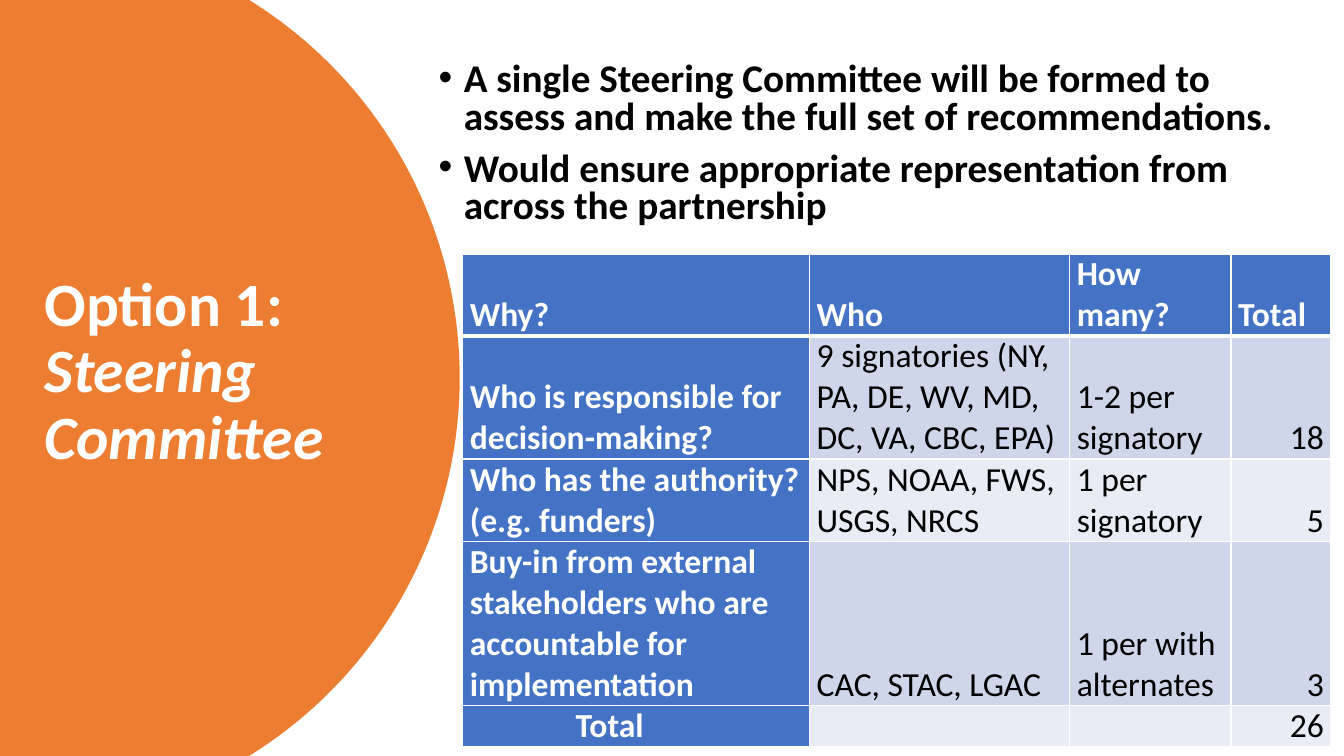
from math import asin, cos, sin

from lxml import etree
from pptx import Presentation
from pptx.dml.color import RGBColor
from pptx.enum.text import MSO_ANCHOR, MSO_AUTO_SIZE, PP_ALIGN
from pptx.oxml.ns import qn
from pptx.util import Inches, Pt

LEFT, RIGHT = PP_ALIGN.LEFT, PP_ALIGN.RIGHT
MIDDLE, BOTTOM = MSO_ANCHOR.MIDDLE, MSO_ANCHOR.BOTTOM
NO_FIT = MSO_AUTO_SIZE.NONE

FONT = "Calibri"
COLORS = {
    "orange": "ED7D31",
    "blue": "4472C4",
    "dark": "CFD5EA",
    "light": "E9EBF5",
    "white": "FFFFFF",
    "black": "000000",
}

POINTS = [
    "A single Steering Committee will be formed to assess and make "
    "the full set of recommendations.",
    "Would ensure appropriate representation from across the partnership",
]
ROWS = [
    ["Why?", "Who", "How many?", "Total"],
    ["Who is responsible for decision-making?",
     "9 signatories (NY, PA, DE, WV, MD, DC, VA, CBC, EPA)",
     "1-2 per signatory", "18"],
    ["Who has the authority? (e.g. funders)", "NPS, NOAA, FWS, USGS, NRCS",
     "1 per signatory", "5"],
    ["Buy-in from external stakeholders who are accountable for implementation",
     "CAC, STAC, LGAC", "1 per with alternates", "3"],
    ["Total", "", "", "26"],
]
WIDTHS = [3.44, 2.58, 1.6, 0.99]
HEIGHTS = [0.7, 1.15, 0.77, 0.77, 0.38]


def color(name):
    return RGBColor.from_string(COLORS[name])


def style(font, size=24, tint="black", bold=False, italic=False):
    font.name, font.size = FONT, Pt(size)
    font.bold, font.italic = bold, italic
    font.color.rgb = color(tint)


def write(para, text, align=LEFT, space=1.0, before=0, **look):
    """Add a run of text to a paragraph and format both."""
    para.alignment = align
    para.line_spacing = space
    para.space_before = Pt(before)
    run = para.add_run()
    run.text = text
    style(run.font, **look)


def place(holder, left, top, width, height):
    """Move a placeholder and return its text frame."""
    holder.left, holder.top = Inches(left), Inches(top)
    holder.width, holder.height = Inches(width), Inches(height)
    frame = holder.text_frame
    frame.word_wrap = True
    frame.auto_size = NO_FIT
    frame.vertical_anchor = MIDDLE
    return frame


def add_disc(slide, mid=0.15, radius=4.41, half=3.75, steps=120):
    """Draw the part of a big circle that lies on the slide."""
    end = asin(half / radius)
    turns = [end * (2 * i / steps - 1) for i in range(steps + 1)]
    arc = [(Inches(mid + radius * cos(t)), Inches(half + radius * sin(t)))
           for t in turns]
    pen = slide.shapes.build_freeform(0, 0)
    pen.add_line_segments(arc + [(0, Inches(2 * half))], close=True)
    disc = pen.convert_to_shape()
    disc.shadow.inherit = False
    disc.fill.solid()
    disc.fill.fore_color.rgb = color("orange")
    disc.line.fill.background()
    # Behind the placeholders
    tree = slide.shapes._spTree
    tree.insert(2, disc._element)


def add_title(slide):
    frame = place(slide.shapes.title, 0.34, 1.26, 3.91, 4.88)
    para = frame.paragraphs[0]
    look = dict(space=0.9, size=44, tint="white", bold=True)
    write(para, "Option 1: ", **look)
    para.add_line_break()
    write(para, "Steering Committee", italic=True, **look)


def add_list(slide):
    frame = place(slide.placeholders[1], 4.25, 0.54, 8.74, 1.8)
    for i, text in enumerate(POINTS):
        para = frame.add_paragraph() if i else frame.paragraphs[0]
        write(para, text, space=0.8, before=10, size=28, bold=True)
        props = para._p.get_or_add_pPr()
        props.set("marL", str(Inches(0.25)))
        props.set("indent", str(-Inches(0.25)))
        etree.SubElement(props, qn("a:buFont")).set("typeface", "Arial")
        etree.SubElement(props, qn("a:buChar")).set("char", "•")


def add_edges(cell, row):
    """Give a cell white borders, thick under the header row."""
    props = cell._tc.get_or_add_tcPr()
    thick = {"T": row == 1, "B": row == 0}
    for side in "LRTB":
        line = etree.SubElement(props, qn("a:ln" + side))
        line.set("w", str(Pt(3 if thick.get(side) else 1)))
        fill = etree.SubElement(line, qn("a:solidFill"))
        etree.SubElement(fill, qn("a:srgbClr")).set("val", COLORS["white"])


def fill_cell(cell, text, row, col):
    head = row == 0 or col == 0
    add_edges(cell, row)
    cell.fill.solid()
    band = "dark" if row % 2 else "light"
    cell.fill.fore_color.rgb = color("blue" if head else band)
    cell.vertical_anchor = BOTTOM
    cell.margin_left = cell.margin_right = Inches(0.07)
    cell.margin_top = cell.margin_bottom = 0
    if row == len(ROWS) - 1 and col == 0:
        cell.margin_left = Inches(1.12)
    if text:
        write(cell.text_frame.paragraphs[0], text,
              align=RIGHT if col == 3 and row else LEFT,
              tint="white" if head else "black", bold=head)


def add_grid(slide):
    frame = slide.shapes.add_table(
        len(ROWS), len(WIDTHS), Inches(4.59), Inches(2.52),
        Inches(sum(WIDTHS)), Inches(sum(HEIGHTS)))
    table = frame.table
    table.first_col = True
    for col, width in zip(table.columns, WIDTHS):
        col.width = Inches(width)
    for row, height in zip(table.rows, HEIGHTS):
        row.height = Inches(height)
    for r, texts in enumerate(ROWS):
        for c, text in enumerate(texts):
            fill_cell(table.cell(r, c), text, r, c)


def main():
    deck = Presentation()
    deck.slide_width, deck.slide_height = Inches(13.33), Inches(7.5)
    slide = deck.slides.add_slide(deck.slide_layouts[1])
    add_disc(slide)
    add_title(slide)
    add_list(slide)
    add_grid(slide)
    deck.save("out.pptx")


if __name__ == "__main__":
    main()
